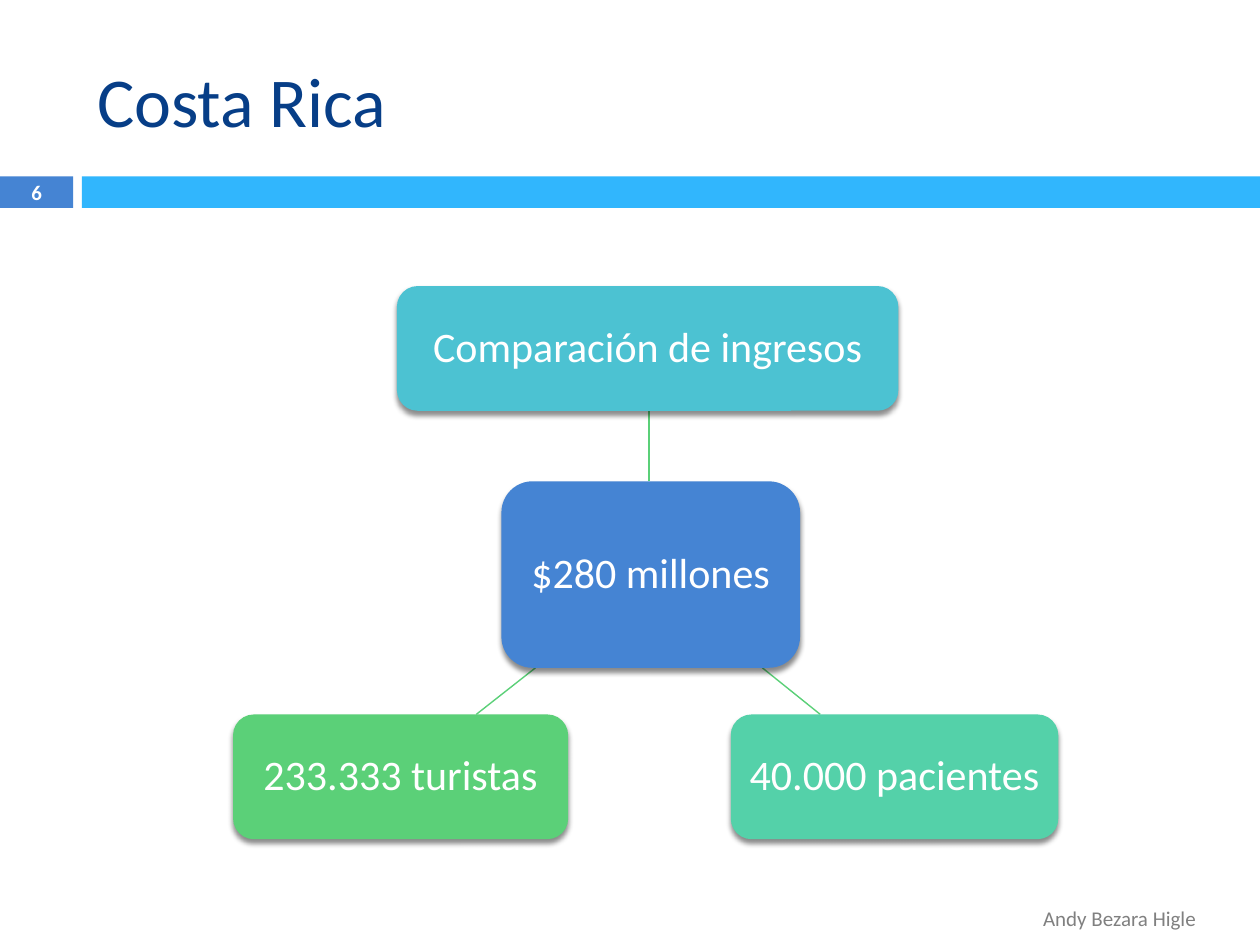
from lxml.etree import SubElement
from pptx import Presentation
from pptx.dml.color import RGBColor
from pptx.enum.shapes import MSO_CONNECTOR, MSO_SHAPE
from pptx.enum.text import MSO_ANCHOR, PP_ALIGN
from pptx.oxml.ns import qn
from pptx.util import Inches, Pt

TITLE = "Costa Rica"
PAGE_NUMBER = "6"
AUTHOR = "Andy Bezara Higle"

# text, fill colour, (left, top, width, height)
NODES = [
    ("$280 millones", "blue", (3.98, 3.82, 2.37, 1.48)),
    ("Comparación de ingresos", "aqua", (3.15, 2.27, 3.98, 0.99)),
    ("40.000 pacientes", "teal", (5.8, 5.67, 2.6, 0.99)),
    ("233.333 turistas", "green", (1.85, 5.67, 2.66, 0.99)),
]
# start and end of each link from the central node
LINKS = [
    ((5.15, 3.82), (5.15, 3.26)),
    ((6.05, 5.3), (6.51, 5.67)),
    ((4.25, 5.3), (3.78, 5.67)),
]
BANDS = [("blue", (0, 1.4, 0.58, 0.25)), ("sky", (0.65, 1.4, 9.35, 0.25))]

THEME = {
    "font": "Calibri",
    "colors": {
        "blue": "4584D3", "sky": "31B6FD", "aqua": "4CC2D2", "teal": "54D1A9",
        "green": "5BD078", "navy": "073E87", "white": "FFFFFF", "gray": "808080",
    },
    "sizes": {"title": 40, "node": 24, "footer": 12, "number": 11.9},
    "link_width": 0.79,
}


def color(name):
    return RGBColor.from_string(THEME["colors"][name])


def place(shape, box):
    shape.left, shape.top, shape.width, shape.height = map(Inches, box)


def write(shape, text, size, color_name, align, bold=False):
    frame = shape.text_frame
    frame.word_wrap = True
    frame.vertical_anchor = MSO_ANCHOR.MIDDLE
    paragraph = frame.paragraphs[0]
    paragraph.alignment = align
    run = paragraph.add_run()
    run.text = text
    run.font.name = THEME["font"]
    run.font.size = Pt(THEME["sizes"][size])
    run.font.bold = bold
    run.font.color.rgb = color(color_name)


def add_block(slide, preset, fill, box):
    block = slide.shapes.add_shape(preset, *map(Inches, box))
    block.fill.solid()
    block.fill.fore_color.rgb = color(fill)
    block.line.fill.background()
    block.shadow.inherit = False
    return block


def add_drop_shadow(shape):
    effects = shape._element.spPr.find(qn("a:effectLst"))
    shadow = SubElement(effects, qn("a:outerShdw"), blurRad=str(Pt(3)),
                        dist=str(Pt(2.4)), dir="5400000", rotWithShape="0")
    black = SubElement(shadow, qn("a:srgbClr"), val="000000")
    SubElement(black, qn("a:alpha"), val="45000")


def add_node(slide, text, fill, box):
    node = add_block(slide, MSO_SHAPE.ROUNDED_RECTANGLE, fill, box)
    add_drop_shadow(node)
    write(node, text, "node", "white", PP_ALIGN.CENTER)
    frame = node.text_frame
    frame.margin_left = frame.margin_right = Inches(0.07)
    frame.margin_top = frame.margin_bottom = Inches(0.07)
    frame.paragraphs[0].line_spacing = 0.9


def add_link(slide, start, end):
    link = slide.shapes.add_connector(MSO_CONNECTOR.STRAIGHT, *map(Inches, start + end))
    link.line.color.rgb = color("green")
    link.line.width = Pt(THEME["link_width"])
    SubElement(link._element.spPr, qn("a:effectLst"))


def add_label(slide, text, size, color_name, align, box, bold=False):
    label = slide.shapes.add_textbox(*map(Inches, box))
    write(label, text, size, color_name, align, bold)


def main():
    deck = Presentation()
    deck.slide_width, deck.slide_height = Inches(10), Inches(7.5)
    slide = deck.slides.add_slide(deck.slide_layouts[5])

    for fill, box in BANDS:
        add_block(slide, MSO_SHAPE.RECTANGLE, fill, box)
    place(slide.shapes.title, (0.67, 0.25, 8.92, 1.08))
    write(slide.shapes.title, TITLE, "title", "navy", PP_ALIGN.LEFT)
    add_label(slide, PAGE_NUMBER, "number", "white", PP_ALIGN.CENTER,
              (0, 1.39, 0.58, 0.27), bold=True)

    for start, end in LINKS:
        add_link(slide, start, end)
    for text, fill, box in NODES:
        add_node(slide, text, fill, box)
    add_label(slide, AUTHOR, "footer", "gray", PP_ALIGN.RIGHT, (0.67, 7.09, 8.92, 0.4))

    deck.save("out.pptx")


if __name__ == "__main__":
    main()
